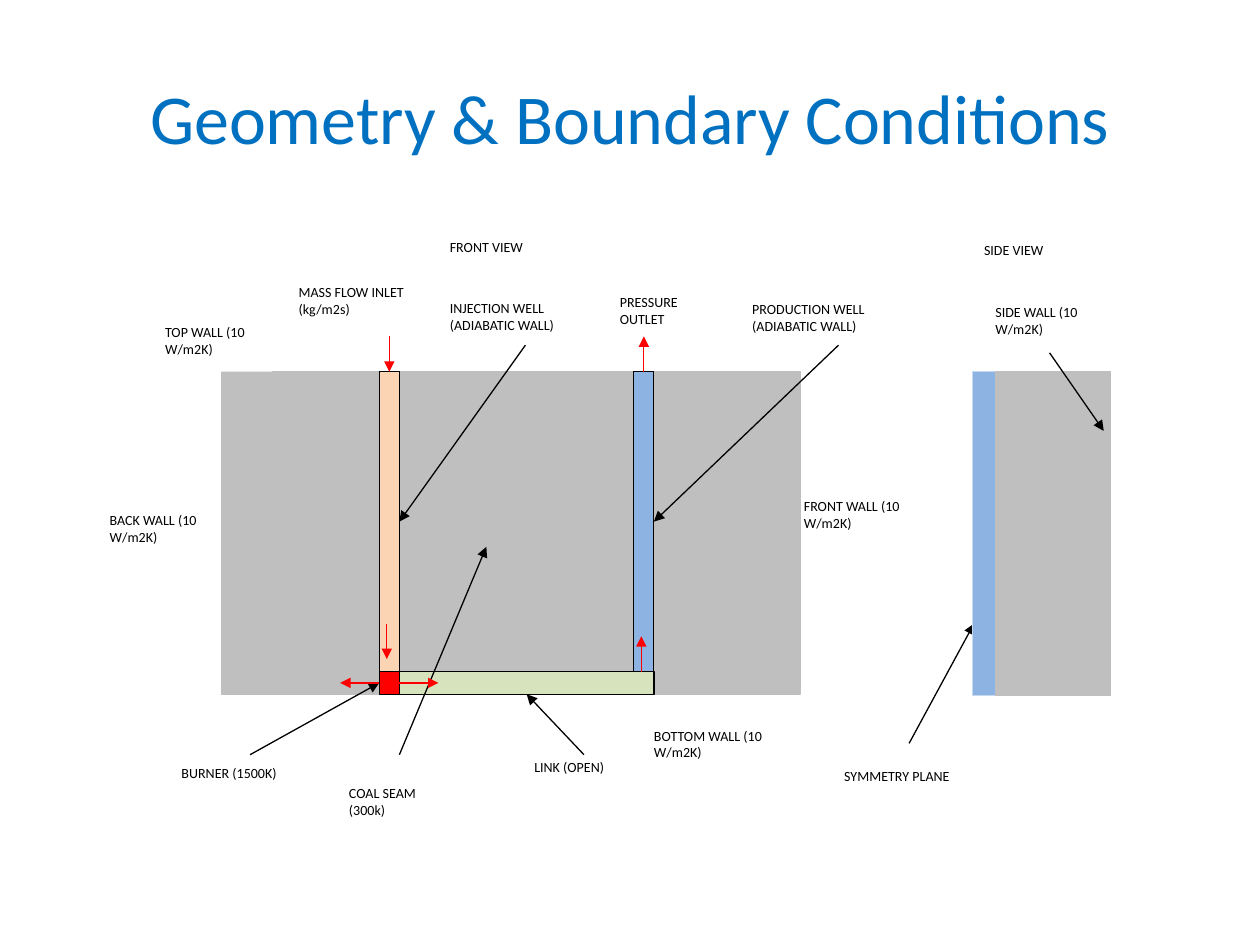
from lxml import etree
from pptx import Presentation
from pptx.dml.color import RGBColor
from pptx.enum.shapes import MSO_CONNECTOR, MSO_SHAPE
from pptx.enum.text import MSO_ANCHOR, PP_ALIGN
from pptx.oxml.ns import qn
from pptx.util import Inches, Pt

RECT = MSO_SHAPE.RECTANGLE
STRAIGHT = MSO_CONNECTOR.STRAIGHT
MIDDLE = MSO_ANCHOR.MIDDLE
LEFT, CENTER = PP_ALIGN.LEFT, PP_ALIGN.CENTER
TOP_SIDE, LEFT_SIDE, BOTTOM_SIDE, RIGHT_SIDE = range(4)

BLACK = RGBColor(0x00, 0x00, 0x00)
WHITE = RGBColor(0xFF, 0xFF, 0xFF)
RED = RGBColor(0xFF, 0x00, 0x00)
TITLE_BLUE = RGBColor(0x00, 0x70, 0xC0)
COAL_GRAY = RGBColor(0xBF, 0xBF, 0xBF)
INJECTION_PEACH = RGBColor(0xFB, 0xD4, 0xB4)
PRODUCTION_BLUE = RGBColor(0x8D, 0xB3, 0xE2)
PLANE_EDGE = RGBColor(0xC6, 0xD9, 0xF1)
LINK_GREEN = RGBColor(0xD6, 0xE3, 0xBC)

WELL_W = 0.16
LINK_H = 0.18


def write_text(sp, text, size=8, color=BLACK, align=LEFT, after=9.1):
    """Write one formatted paragraph into a shape."""
    tf = sp.text_frame
    tf.word_wrap = True
    tf.vertical_anchor = MIDDLE
    tf.margin_left = tf.margin_right = tf.margin_top = tf.margin_bottom = 0
    p = tf.paragraphs[0]
    p.alignment = align
    p.space_after = Pt(after)
    r = p.add_run()
    r.text = text
    r.font.name = "Calibri"
    r.font.size = Pt(size)
    r.font.color.rgb = color


def add_rect(s, box, x, y, w, h, fill, line=None):
    """Add a filled rectangle offset from the box's corner."""
    sp = s.shapes.add_shape(
        RECT, Inches(box[0] + x), Inches(box[1] + y), Inches(w), Inches(h))
    sp.shadow.inherit = False
    sp.fill.solid()
    sp.fill.fore_color.rgb = fill
    if line is None:
        sp.line.fill.background()
    else:
        sp.line.color.rgb = line
        sp.line.width = Pt(0.75)
    return sp


def add_label(s, box, text, x, y, w, h):
    """Add a small caption offset from the box's corner."""
    sp = add_rect(s, box, x, y, w, h, WHITE)
    write_text(sp, text)
    return sp


def add_arrow(s, box, start, end, color=BLACK):
    """Add an arrow whose ends are offsets or (shape, side) pairs."""
    cxn = s.shapes.add_connector(STRAIGHT, 0, 0, 0, 0)
    if isinstance(start[0], (int, float)):
        cxn.begin_x, cxn.begin_y = Inches(box[0] + start[0]), Inches(box[1] + start[1])
    else:
        cxn.begin_connect(*start)
    if isinstance(end[0], (int, float)):
        cxn.end_x, cxn.end_y = Inches(box[0] + end[0]), Inches(box[1] + end[1])
    else:
        cxn.end_connect(*end)
    cxn.line.color.rgb = color
    cxn.line.width = Pt(0.75)
    sp_pr = cxn.element.spPr
    etree.SubElement(sp_pr.find(qn("a:ln")), qn("a:tailEnd"), type="triangle")
    etree.SubElement(sp_pr, qn("a:effectLst"))


def add_title(s, box):
    """Place the slide title in the box."""
    sp = s.shapes.add_textbox(*(Inches(v) for v in box))
    write_text(sp, "Geometry & Boundary Conditions",
               size=40, color=TITLE_BLUE, align=CENTER, after=0)


def add_front_view(s, box):
    """Draw the coal seam in the box, with wells, link, burner and captions."""
    w, h = box[2:]
    well_h = h - LINK_H
    injection_x, production_x = 1.25, 3.27
    link_x, right_x = injection_x + WELL_W, production_x + WELL_W
    mid_y = well_h + LINK_H / 2

    for x, end_x, part_h in ((0, injection_x, h),
                             (link_x, production_x, well_h),
                             (right_x, w, h)):
        add_rect(s, box, x, 0, end_x - x, part_h, COAL_GRAY, COAL_GRAY)
    injection = add_rect(s, box, injection_x, 0, WELL_W, well_h, INJECTION_PEACH, BLACK)
    production = add_rect(s, box, production_x, 0, WELL_W, well_h, PRODUCTION_BLUE, BLACK)
    burner = add_rect(s, box, injection_x, well_h, WELL_W, LINK_H, RED, BLACK)
    link = add_rect(s, box, link_x, well_h, right_x - link_x, LINK_H, LINK_GREEN, BLACK)

    for text, *place in (
            ("FRONT VIEW", 1.81, -1.09, 0.86, 0.2),
            ("TOP WALL (10 W/m2K)", -0.45, -0.5, 0.85, 0.5),
            ("BOTTOM WALL (10 W/m2K)", right_x, 2.67, 0.98, 0.57),
            ("BACK WALL (10 W/m2K)", -0.89, 0.87, 0.79, 0.75),
            ("FRONT WALL (10 W/m2K)", 4.62, 0.87, 0.86, 0.52),
            ("MASS FLOW INLET (kg/m2s)", 0.61, -0.86, 1.1, 0.59),
            ("PRESSURE OUTLET", 3.16, -0.69, 0.7, 0.41)):
        add_label(s, box, text, *place)

    for text, place, side, end in (
            ("BURNER (1500K)", (-0.32, 3.04, 1.09, 0.28), TOP_SIDE, (burner, LEFT_SIDE)),
            ("COAL SEAM (300k)", (1.01, 3.04, 0.8, 0.74), TOP_SIDE, (2.1, 1.39)),
            ("LINK (OPEN)", (2.48, 3.04, 0.79, 0.2), TOP_SIDE, (link, BOTTOM_SIDE)),
            ("INJECTION WELL (ADIABATIC WALL)", (1.81, -0.67, 1.2, 0.46),
             BOTTOM_SIDE, (injection, RIGHT_SIDE)),
            ("PRODUCTION WELL (ADIABATIC WALL)", (4.21, -0.65, 1.37, 0.44),
             BOTTOM_SIDE, (production, RIGHT_SIDE))):
        add_arrow(s, box, (add_label(s, box, text, *place), side), end)

    for start, end in (
            ((1.33, -0.28), (injection, TOP_SIDE)),
            ((production, TOP_SIDE), (3.35, -0.28)),
            ((1.31, mid_y), (1.72, mid_y)),
            ((burner, LEFT_SIDE), (0.94, mid_y)),
            ((1.31, 2), (1.31, 2.28)),
            ((3.33, well_h), (3.33, 2.1))):
        add_arrow(s, box, start, end, RED)


def add_side_view(s, box):
    """Draw the side wall and symmetry plane in the box, with captions."""
    w, h = box[2:]
    plane_w = 0.18
    add_label(s, box, "SIDE VIEW", 0.09, -1.07, 0.71, 0.2)
    symmetry = add_label(s, box, "SYMMETRY PLANE", -1.02, 2.95, 1.03, 0.51)
    side_wall = add_label(s, box, "SIDE WALL (10 W/m2K)", plane_w, -0.67, 0.86, 0.52)
    add_arrow(s, box, (symmetry, TOP_SIDE), (0.01, 2))
    add_rect(s, box, 0, 0, plane_w, h, PRODUCTION_BLUE, PLANE_EDGE)
    add_rect(s, box, plane_w, 0, w - plane_w, h, COAL_GRAY, COAL_GRAY)
    add_arrow(s, box, (side_wall, BOTTOM_SIDE), (1.04, 0.47))


def main():
    """Build the slide and save it."""
    prs = Presentation()
    prs.slide_width, prs.slide_height = Inches(10), Inches(7.5)
    s = prs.slides.add_slide(prs.slide_layouts[6])
    add_title(s, (0.5, 0.3, 9, 1.25))
    add_front_view(s, (1.76, 2.95, 4.59, 2.56))
    add_side_view(s, (7.72, 2.95, 1.09, 2.57))
    prs.save("out.pptx")


if __name__ == "__main__":
    main()
